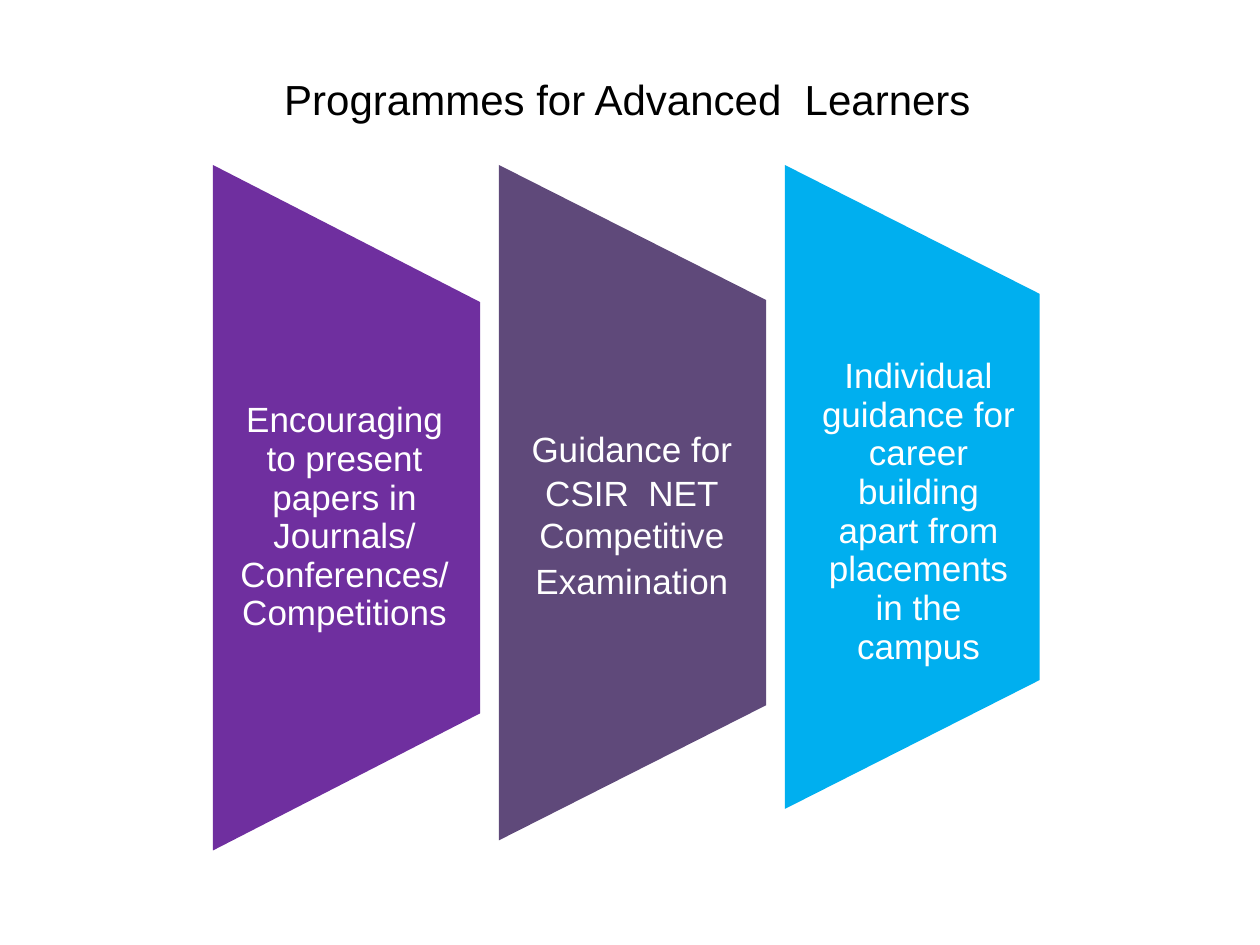
from pptx import Presentation
from pptx.dml.color import RGBColor
from pptx.enum.text import MSO_ANCHOR, PP_ALIGN
from pptx.util import Inches, Pt

BLACK = RGBColor(0x00, 0x00, 0x00)
WHITE = RGBColor(0xFF, 0xFF, 0xFF)
PURPLE = RGBColor(0x6F, 0x2F, 0x9F)
PLUM = RGBColor(0x5F, 0x49, 0x7A)
SKY = RGBColor(0x00, 0xAF, 0xEF)

PANEL_LEFT, PANEL_TOP, PANEL_STEP = 1.69, 1.31, 2.27
SLOPE = 0.2

PANELS = [
    (PURPLE, 2.12, 5.44, (1.85, 3.14, 1.77, 1.91),
     ["Encouraging to present papers in Journals/ Conferences/ Competitions"],
     [0.92]),
    (PLUM, 2.12, 5.36, (4.17, 3.32, 1.69, 1.48),
     ["Guidance for CSIR  NET", "Competitive", "Examination"],
     [Pt(25.5), Pt(23.7), Pt(26.2)]),
    (SKY, 2.02, 5.11, (6.47, 2.79, 1.64, 2.53),
     ["Individual guidance for career building\vapart from placements in the campus"],
     [0.92]),
]


class Deck:
    font = "Arial"

    def __init__(self, prs):
        self.s = prs.slides.add_slide(prs.slide_layouts[6])

    def panel(self, left, top, width, height, color):
        drop = SLOPE * height
        right, bottom = left + width, top + height
        corners = [(left, bottom), (right, bottom - drop), (right, top + drop)]
        builder = self.s.shapes.build_freeform(Inches(left), Inches(top))
        builder.add_line_segments([(Inches(x), Inches(y)) for x, y in corners])
        sp = builder.convert_to_shape()
        sp.shadow.inherit = False
        sp.fill.solid()
        sp.fill.fore_color.rgb = color
        sp.line.fill.background()

    def text(self, box, lines, spacings, size, color, inset, anchor=MSO_ANCHOR.TOP):
        tf = self.s.shapes.add_textbox(*map(Inches, box)).text_frame
        tf.word_wrap = True
        tf.vertical_anchor = anchor
        tf.margin_left = tf.margin_right = tf.margin_bottom = 0
        tf.margin_top = Inches(inset)
        tf.text = "\n".join(lines)
        for p, spacing in zip(tf.paragraphs, spacings):
            p.alignment = PP_ALIGN.CENTER
            p.line_spacing = spacing
            for r in p.runs:
                r.font.name = self.font
                r.font.size = Pt(size)
                r.font.color.rgb = color


def main():
    prs = Presentation()
    prs.slide_width, prs.slide_height = Inches(10), Inches(7.5)
    deck = Deck(prs)
    for i, (color, width, height, box, lines, spacings) in enumerate(PANELS):
        deck.panel(PANEL_LEFT + i * PANEL_STEP, PANEL_TOP, width, height, color)
        deck.text(box, lines, spacings, 20, WHITE, 0.05)
    deck.text((1.75, 0.58, 6.46, 0.39), ["Programmes for Advanced  Learners"],
              [1.01], 24, BLACK, 0.01, MSO_ANCHOR.MIDDLE)
    prs.save("out.pptx")


if __name__ == "__main__":
    main()
